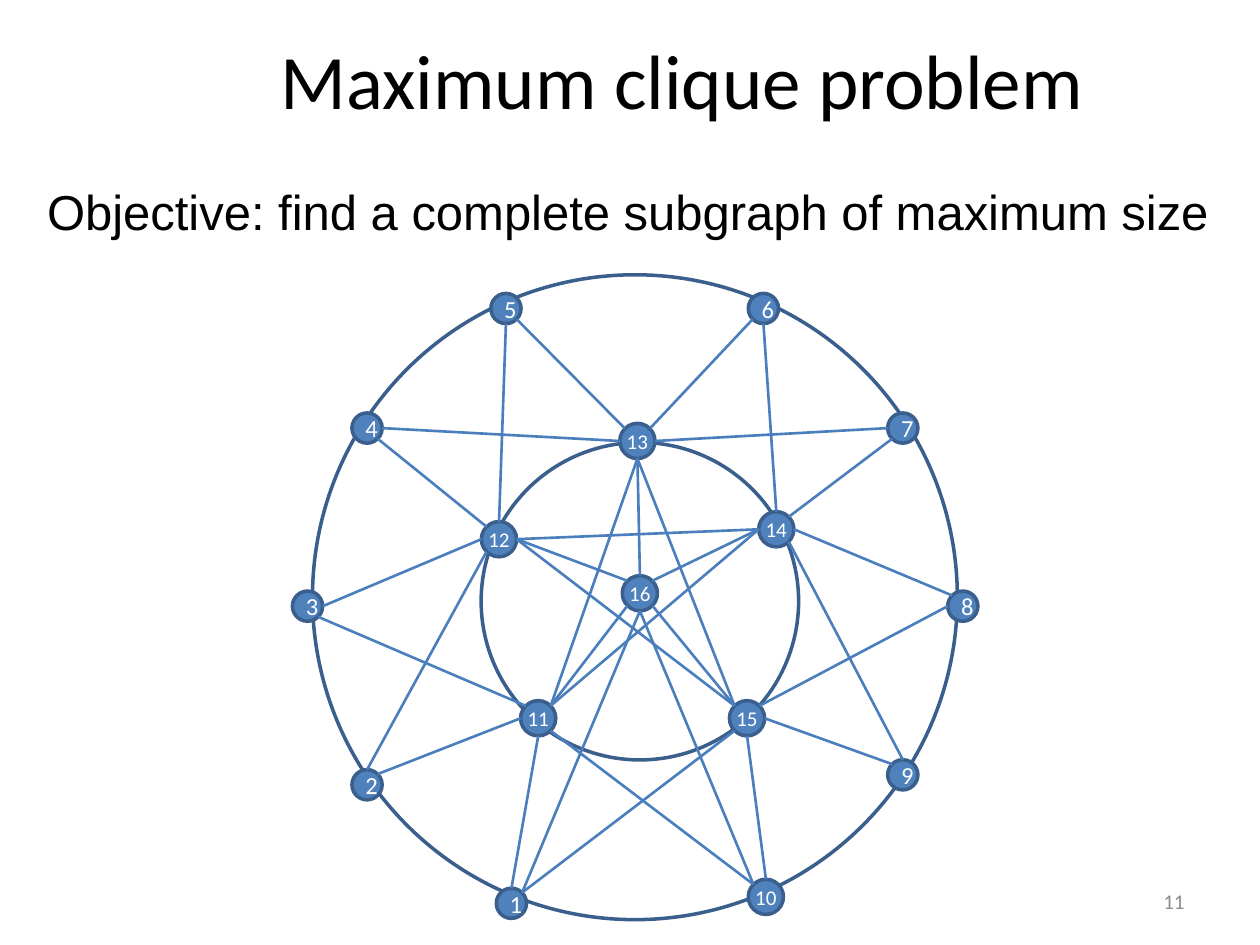
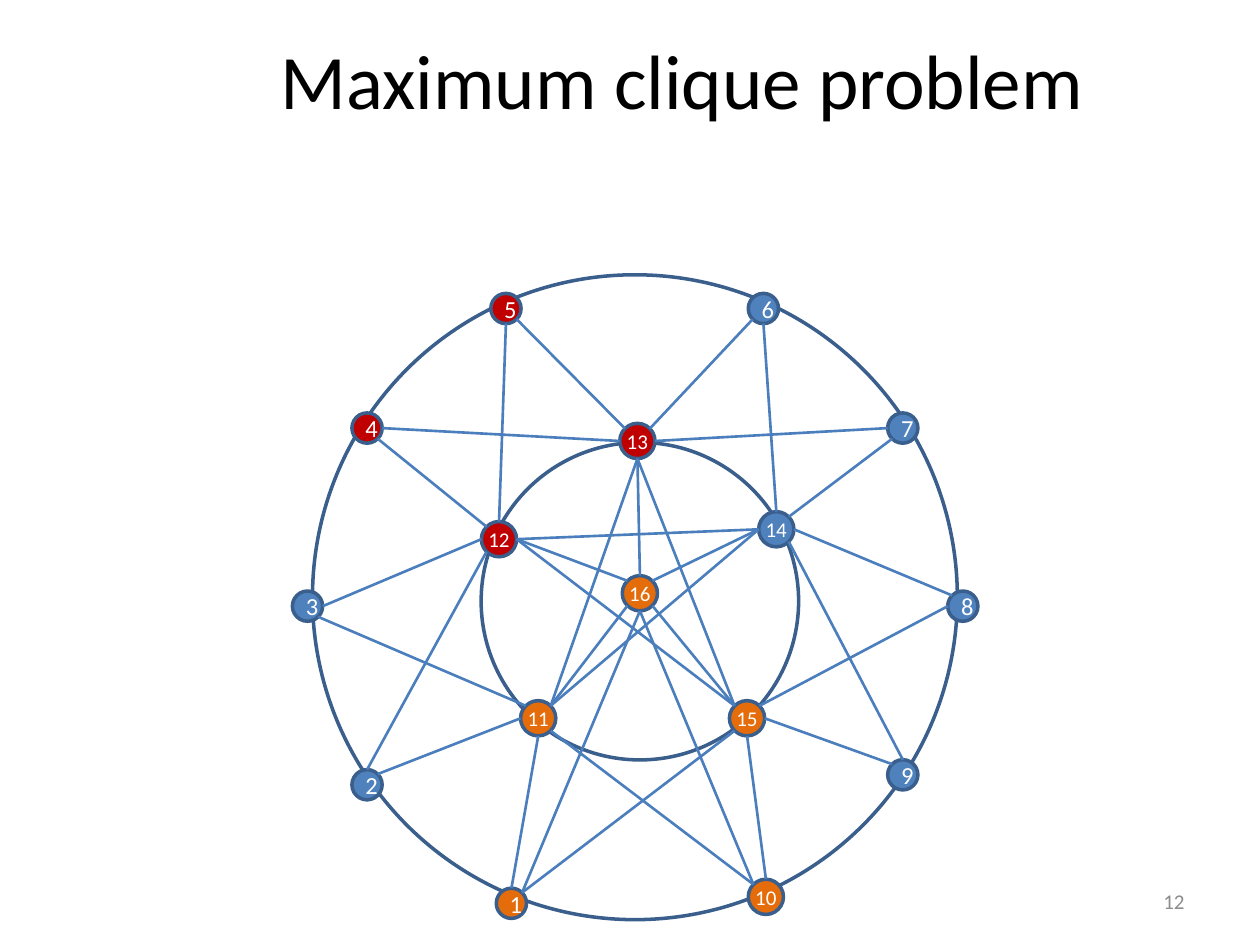
from dataclasses import dataclass
from math import cos, radians, sin

from lxml.etree import SubElement
from pptx import Presentation
from pptx.dml.color import RGBColor
from pptx.enum.shapes import MSO_CONNECTOR, MSO_SHAPE
from pptx.enum.text import MSO_ANCHOR, PP_ALIGN
from pptx.oxml.ns import qn
from pptx.util import Cm, Pt


@dataclass(frozen=True)
class Theme:
    text: str = "000000"
    muted: str = "8C8C8C"
    on_node: str = "FFFFFF"
    node: str = "4F81BD"
    red: str = "C00000"
    orange: str = "E46C0A"
    outline: str = "3A5F8C"
    edge: str = "4B7EBC"
    heading_font: str = "Calibri"
    body_font: str = "Arial"
    title_size: int = 44
    objective_size: int = 28
    digit_size: int = 14
    small_size: int = 12
    outline_width: float = 2
    edge_width: float = 1.5


THEME = Theme()

TITLE = "Maximum clique problem"
OBJECTIVE = "Objective: find a complete subgraph of maximum size"
SLIDES = [
    {"number": 11, "objective": OBJECTIVE, "cliques": {}},
    {"number": 12, "objective": None,
     "cliques": {THEME.red: (4, 5, 12, 13), THEME.orange: (1, 10, 11, 15, 16)}},
]

# Centre x, centre y and diameter, in cm
RINGS = [(12.9, 12.12, 6.4), (12.8, 12.04, 13)]

# Vertex number: centre, in cm
VERTICES = {
    1: (10.31, 18.21), 2: (7.4, 15.82), 3: (6.2, 12.22), 4: (7.4, 8.63),
    5: (10.2, 6.22), 6: (15.39, 6.22), 7: (18.2, 8.63), 8: (19.41, 12.22),
    9: (18.2, 15.62), 10: (15.44, 18.08), 11: (10.85, 14.48),
    12: (10.06, 10.87), 13: (12.85, 8.89), 14: (15.65, 10.67),
    15: (15.06, 14.48), 16: (12.9, 11.96),
}

# Each edge leaves one vertex at a compass point and meets another at one
EDGES = [
    (11, "NE", 13, "S"), (13, "S", 15, "NW"), (12, "E", 14, "W"),
    (12, "E", 15, "NW"), (14, "W", 11, "NE"), (11, "NE", 16, "SW"),
    (14, "W", 16, "NE"), (13, "S", 16, "N"), (12, "E", 16, "NW"),
    (15, "NW", 16, "SE"), (5, "S", 12, "N"), (6, "SW", 13, "NE"),
    (7, "SW", 14, "NE"), (13, "NW", 5, "SE"), (12, "NW", 4, "SE"),
    (12, "W", 3, "E"), (11, "W", 2, "NE"), (11, "S", 1, "N"),
    (15, "S", 10, "N"), (15, "E", 9, "NW"), (14, "E", 8, "NW"),
    (6, "S", 14, "N"), (14, "SE", 9, "N"), (13, "E", 7, "W"),
    (8, "W", 15, "NE"), (11, "SE", 10, "NW"), (15, "SW", 1, "NE"),
    (3, "SE", 11, "NW"), (13, "W", 4, "E"), (16, "S", 1, "NE"),
    (16, "S", 10, "NW"), (12, "SW", 2, "N"),
]
COMPASS = ("E", "SE", "S", "SW", "W", "NW", "N", "NE")


def format_text(frame, text, size, color, align, font=THEME.heading_font):
    frame.text = text
    paragraph = frame.paragraphs[0]
    paragraph.alignment = align
    run_font = paragraph.runs[0].font
    run_font.name = font
    run_font.size = Pt(size)
    run_font.color.rgb = RGBColor.from_string(color)


def add_label(slide, box, text, anchor, **text_style):
    frame = slide.shapes.add_textbox(*map(Cm, box)).text_frame
    frame.word_wrap = True
    frame.vertical_anchor = anchor
    format_text(frame, text, **text_style)


def add_circle(slide, x, y, diameter, fill=None):
    """Draw an outlined circle around a centre; no fill leaves it hollow."""
    circle = slide.shapes.add_shape(
        MSO_SHAPE.OVAL, Cm(x - diameter / 2), Cm(y - diameter / 2),
        Cm(diameter), Cm(diameter))
    circle.shadow.inherit = False
    circle.line.color.rgb = RGBColor.from_string(THEME.outline)
    circle.line.width = Pt(THEME.outline_width)
    if fill:
        circle.fill.solid()
        circle.fill.fore_color.rgb = RGBColor.from_string(fill)
    else:
        circle.fill.background()
    return circle


def has_two_digits(vertex):
    return vertex >= 10


def vertex_diameter(vertex):
    return 0.71 if has_two_digits(vertex) else 0.61


def add_vertex(slide, vertex, fill):
    circle = add_circle(slide, *VERTICES[vertex], vertex_diameter(vertex), fill)
    frame = circle.text_frame
    frame.vertical_anchor = MSO_ANCHOR.MIDDLE
    size = THEME.digit_size
    if has_two_digits(vertex):
        size = THEME.small_size
        frame.margin_left = frame.margin_right = 0
        frame.margin_top = frame.margin_bottom = 0
    format_text(frame, str(vertex), size, THEME.on_node, PP_ALIGN.CENTER)


def rim_point(vertex, direction):
    x, y = VERTICES[vertex]
    radius = vertex_diameter(vertex) / 2
    angle = radians(45 * COMPASS.index(direction))
    return Cm(x + radius * cos(angle)), Cm(y + radius * sin(angle))


def add_edge(slide, start, start_side, end, end_side):
    edge = slide.shapes.add_connector(
        MSO_CONNECTOR.STRAIGHT,
        *rim_point(start, start_side), *rim_point(end, end_side))
    edge.line.color.rgb = RGBColor.from_string(THEME.edge)
    edge.line.width = Pt(THEME.edge_width)
    SubElement(edge.element.spPr, qn("a:effectLst"))


def add_graph(slide, cliques):
    for ring in RINGS:
        add_circle(slide, *ring)
    clique_color = {vertex: color for color, members in cliques.items()
                    for vertex in members}
    for vertex in VERTICES:
        add_vertex(slide, vertex, clique_color.get(vertex, THEME.node))
    for edge in EDGES:
        add_edge(slide, *edge)


def add_slide(deck, number, objective, cliques):
    slide = deck.slides.add_slide(deck.slide_layouts[6])
    add_label(slide, (2.11, 0, 23.29, 3.18), TITLE, MSO_ANCHOR.MIDDLE,
              size=THEME.title_size, color=THEME.text, align=PP_ALIGN.CENTER)
    add_label(slide, (18.2, 17.66, 5.93, 1.01), str(number), MSO_ANCHOR.MIDDLE,
              size=THEME.small_size, color=THEME.muted, align=PP_ALIGN.RIGHT)
    add_graph(slide, cliques)
    if objective:
        add_label(slide, (0.7, 3.53, 24.2, 1.45), objective, MSO_ANCHOR.TOP,
                  size=THEME.objective_size, color=THEME.text,
                  align=PP_ALIGN.LEFT, font=THEME.body_font)


def main():
    deck = Presentation()
    deck.slide_width, deck.slide_height = Cm(25.4), Cm(19.05)
    for content in SLIDES:
        add_slide(deck, **content)
    deck.save("out.pptx")


if __name__ == "__main__":
    main()
